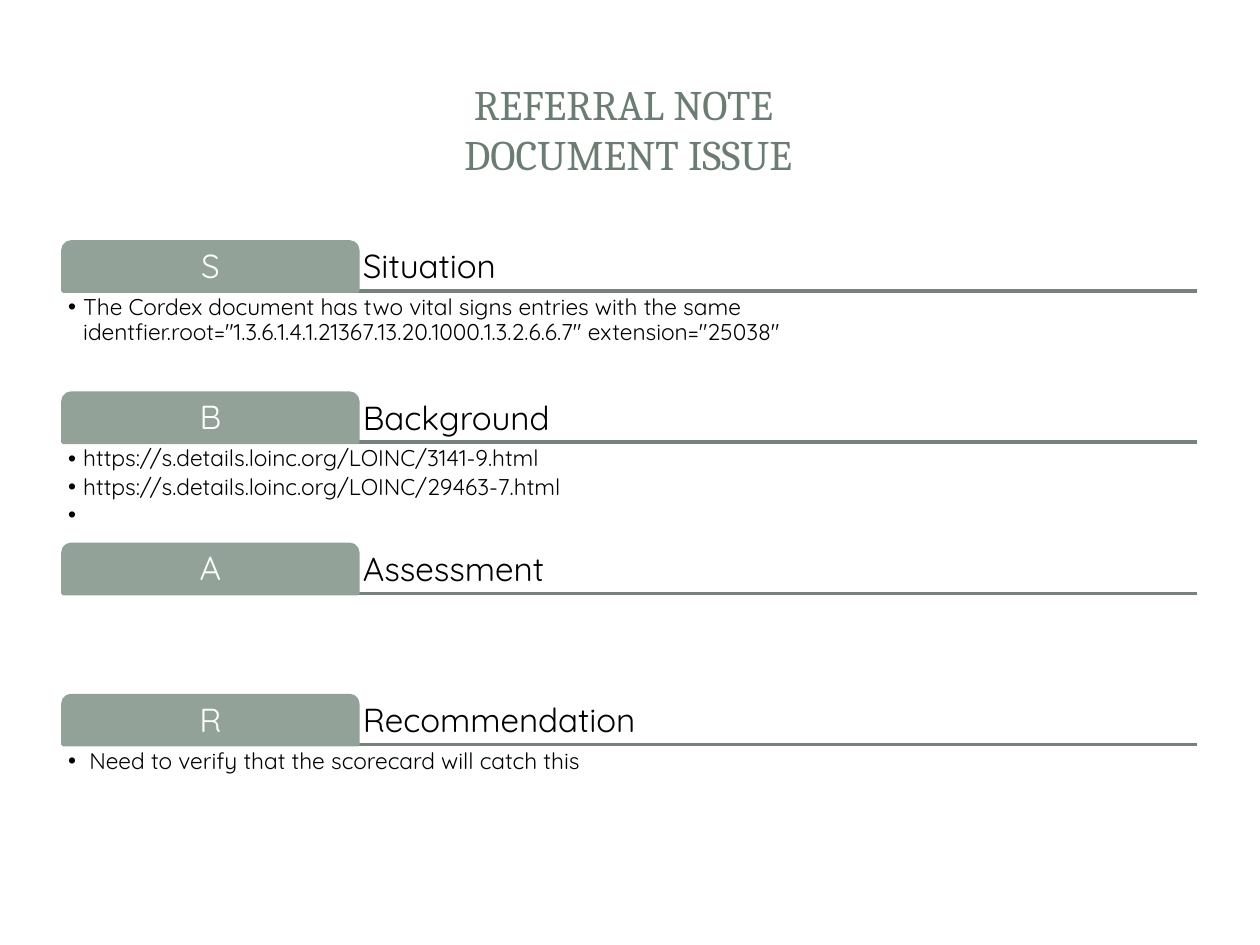
from lxml import etree
from pptx import Presentation
from pptx.dml.color import RGBColor
from pptx.enum.shapes import MSO_CONNECTOR, MSO_SHAPE
from pptx.enum.text import MSO_ANCHOR, MSO_AUTO_SIZE, PP_ALIGN
from pptx.oxml.ns import qn
from pptx.util import Pt

PX = 9144  # 100 px to the inch
LEFT, CENTER = PP_ALIGN.LEFT, PP_ALIGN.CENTER
TOP, MIDDLE, BOTTOM = MSO_ANCHOR.TOP, MSO_ANCHOR.MIDDLE, MSO_ANCHOR.BOTTOM
COLORS = {"title": "6B7D72", "tab": "93A299", "rule": "76827B",
          "text": "000000", "white": "FFFFFF"}
RGB = {name: RGBColor.from_string(value) for name, value in COLORS.items()}

SECTIONS = [
    ("Situation", ["The Cordex document has two vital signs entries with the same "
                   'identfier.root="1.3.6.1.4.1.21367.13.20.1000.1.3.2.6.6.7" extension="25038"']),
    ("Background", ["https://s.details.loinc.org/LOINC/3141-9.html",
                    "https://s.details.loinc.org/LOINC/29463-7.html",
                    " "]),
    ("Assessment", []),
    ("Recommendation", [" Need to verify that the scorecard will catch this"]),
]


def write(sp, lines, size=19, font="Quicksand", color="text", align=LEFT,
          anchor=MIDDLE, spacing=0.9, after=0, inset=4, bullet=False):
    tf = sp.text_frame
    tf.word_wrap = True
    tf.auto_size = MSO_AUTO_SIZE.NONE
    tf.vertical_anchor = anchor
    tf.margin_left = tf.margin_right = tf.margin_top = tf.margin_bottom = inset * PX
    for i, line in enumerate(lines):
        p = tf.add_paragraph() if i else tf.paragraphs[0]
        p.alignment = align
        p.line_spacing = spacing
        p.space_before, p.space_after = Pt(0), Pt(after)
        r = p.add_run()
        r.text = line
        r.font.size, r.font.name, r.font.bold = Pt(size), font, False
        r.font.color.rgb = RGB[color]
        if bullet:
            pPr = p._p.get_or_add_pPr()
            pPr.set("marL", str(12 * PX))
            pPr.set("indent", str(-12 * PX))
            etree.SubElement(pPr, qn("a:buChar")).set("char", "•")


def place(sp, x, y, w, h):
    sp.left, sp.top, sp.width, sp.height = x * PX, y * PX, w * PX, h * PX


prs = Presentation()
prs.slide_width, prs.slide_height = 1000 * PX, 750 * PX
s = prs.slides.add_slide(prs.slide_layouts[4])  # title and four bodies

# Title
title = s.shapes.title
place(title, 47, 45, 903, 114)
write(title, ["REFERRAL NOTE ", "DOCUMENT ISSUE"], size=24, font="Cambria",
      color="title", align=CENTER, spacing=1.0, inset=5)

# Sections: rule, lettered tab, heading and bullet list
x, w, tab_w, tab_h, pitch = 50, 900, 234, 39, 120
for i, (heading, bullets) in enumerate(SECTIONS):
    y = 192 + i * pitch
    base = y + tab_h

    rule = s.shapes.add_connector(MSO_CONNECTOR.STRAIGHT, x * PX, base * PX,
                                  (x + w) * PX, base * PX)
    rule.line.color.rgb = RGB["rule"]
    rule.line.width = Pt(2)
    etree.SubElement(rule._element.spPr, qn("a:effectLst"))

    tab = s.shapes.add_shape(MSO_SHAPE.ROUND_2_SAME_RECTANGLE, x * PX, y * PX,
                             tab_w * PX, tab_h * PX)
    tab.shadow.inherit = False
    tab.fill.solid()
    tab.fill.fore_color.rgb = tab.line.color.rgb = RGB["tab"]
    tab.line.width = Pt(2)
    write(tab, [heading[0]], color="white", align=CENTER)

    label = s.shapes.add_textbox((x + tab_w) * PX, y * PX, (w - tab_w) * PX, tab_h * PX)
    write(label, [heading], anchor=BOTTOM)

    body = s.placeholders[i + 1]
    if bullets:
        place(body, x, base, w, 79)
        write(body, bullets, size=13, anchor=TOP, after=2, bullet=True)
    else:
        body._element.getparent().remove(body._element)

# Footer placeholders are not carried over by add_slide, so the slide is complete
prs.save("out.pptx")
